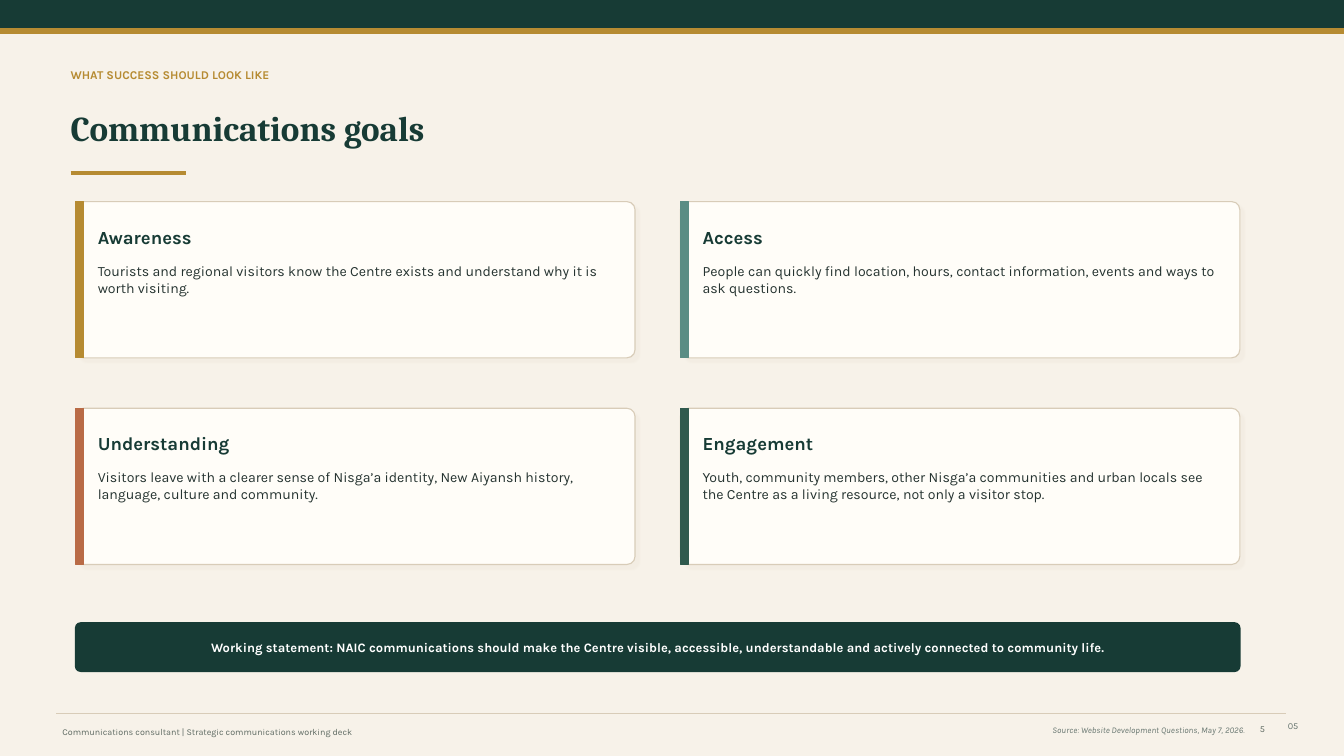
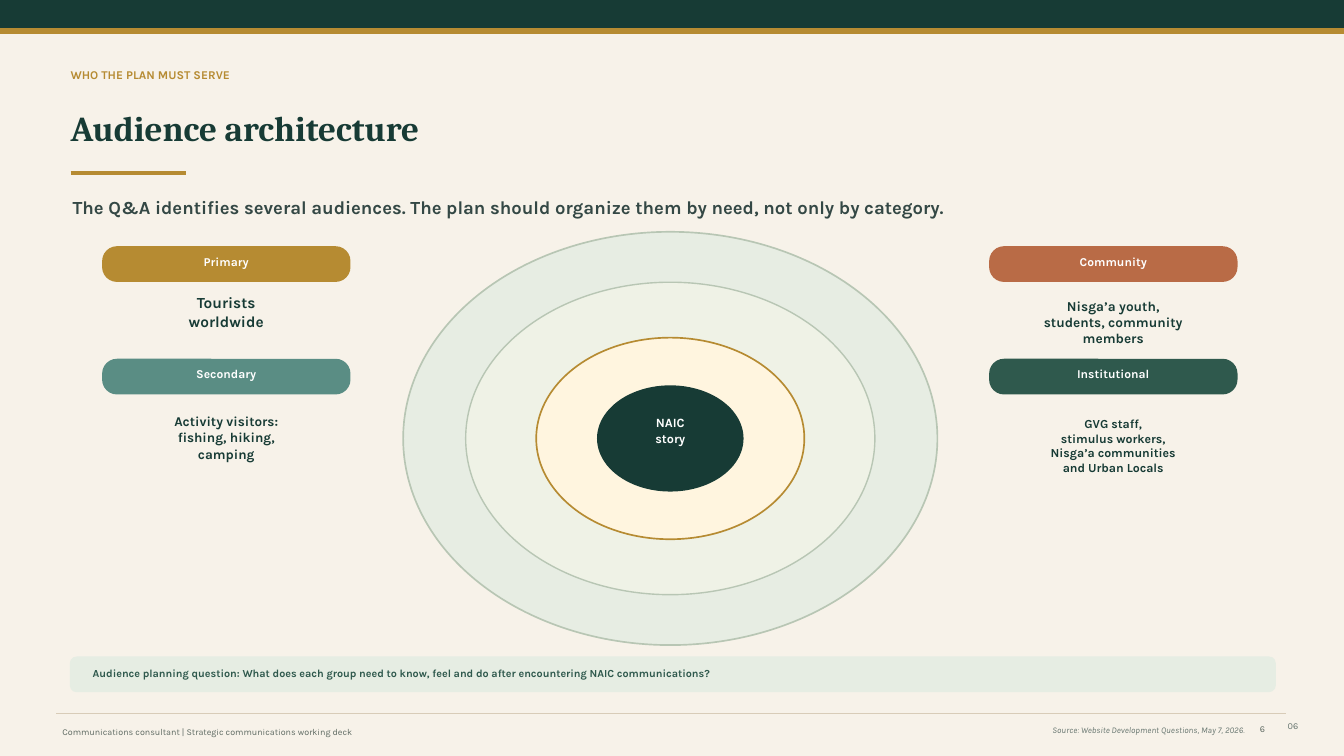
from lxml import etree
from pptx import Presentation
from pptx.dml.color import RGBColor
from pptx.enum.shapes import MSO_CONNECTOR, MSO_SHAPE as Preset
from pptx.enum.text import MSO_ANCHOR as Anchor, PP_ALIGN as Align
from pptx.oxml.ns import qn
from pptx.util import Pt

CREAM = RGBColor(0xF7, 0xF2, 0xE9)
IVORY = RGBColor(0xFF, 0xFD, 0xF8)
WHITE = RGBColor(0xFF, 0xFF, 0xFF)
PINE = RGBColor(0x17, 0x3B, 0x35)
FOREST = RGBColor(0x2F, 0x59, 0x4D)
GOLD = RGBColor(0xB6, 0x8B, 0x32)
TEAL = RGBColor(0x5A, 0x8D, 0x84)
CLAY = RGBColor(0xB9, 0x6B, 0x46)
SAND = RGBColor(0xD8, 0xCC, 0xB8)
SHADE = RGBColor(0xD7, 0xC9, 0xB5)
MIST = RGBColor(0xE6, 0xED, 0xE3)
LEAF = RGBColor(0xEF, 0xF2, 0xE6)
BUTTER = RGBColor(0xFF, 0xF5, 0xDF)
SAGE = RGBColor(0xB8, 0xC6, 0xB4)
INK = RGBColor(0x25, 0x33, 0x30)
SLATE = RGBColor(0x34, 0x48, 0x45)
MOSS = RGBColor(0x5F, 0x6B, 0x63)
GREY = RGBColor(0x66, 0x75, 0x6F)

WIDTH, HEIGHT = 960, 540
HEADING, BODY = "Cambria", "Karla"


def text_style(size, color, name=BODY, bold=False, italic=False):
    """Return a pair of font format values and text colour."""
    return {"name": name, "size": Pt(size), "bold": bold, "italic": italic}, color


EYEBROW = text_style(8.5, GOLD, bold=True)
TITLE = text_style(25, PINE, HEADING, bold=True)
LEAD = text_style(13.2, SLATE, bold=True)
CARD_TITLE = text_style(13.2, PINE, bold=True)
CARD_BODY = text_style(10.1, INK)
STATEMENT = text_style(9.2, WHITE, bold=True)
QUESTION = text_style(7.7, FOREST, bold=True)
PILL = text_style(8.6, WHITE, bold=True)
CORE = text_style(9, WHITE, bold=True)
FOOTER = text_style(6.4, MOSS)
SOURCE = text_style(6.2, GREY, italic=True)
PAGE = text_style(6.5, MOSS)
PAGE_CODE = text_style(6.5, GREY)


def points(box):
    """Convert a box of numbers to point lengths."""
    return [Pt(round(value, 2)) for value in box]


def add_text(slide, box, text, style, align=Align.LEFT, anchor=Anchor.MIDDLE):
    """Add a wrapped text box without margins, one paragraph per line."""
    frame = slide.shapes.add_textbox(*points(box)).text_frame
    settings = {"word_wrap": True, "vertical_anchor": anchor, "margin_left": 0,
                "margin_right": 0, "margin_top": 0, "margin_bottom": 0}
    for name, value in settings.items():
        setattr(frame, name, value)
    frame.text = text
    font_format, color = style
    for paragraph in frame.paragraphs:
        paragraph.alignment = align
        for run in paragraph.runs:
            for name, value in font_format.items():
                setattr(run.font, name, value)
            run.font.color.rgb = color


def add_preset(slide, preset, box, fill, line=None, weight=1, radius=None):
    """Add a filled preset shape, its line matching the fill by default."""
    shape = slide.shapes.add_shape(preset, *points(box))
    shape.shadow.inherit = False
    shape.fill.solid()
    shape.fill.fore_color.rgb = fill
    shape.line.color.rgb = line or fill
    shape.line.width = Pt(weight)
    if radius is not None:
        shape.adjustments[0] = radius / min(box[2:])
    return shape


def add_rule(slide, left, right, top, color, weight):
    """Add a horizontal line."""
    rule = slide.shapes.add_connector(
        MSO_CONNECTOR.STRAIGHT, Pt(left), Pt(top), Pt(right), Pt(top))
    rule.line.color.rgb = color
    rule.line.width = Pt(weight)
    etree.SubElement(rule._element.spPr, qn("a:effectLst"))


def set_alpha(color_element, percent):
    """Set the opacity of a colour element."""
    etree.SubElement(color_element, qn("a:alpha"), val=str(percent * 1000))


def add_soft_shadow(shape):
    """Give a shape a faint shadow to the lower right."""
    effects = shape._element.spPr.find(qn("a:effectLst"))
    shadow = etree.SubElement(
        effects, qn("a:outerShdw"), blurRad=str(Pt(1)), dist=str(Pt(4)),
        dir="2700000", algn="ctr", rotWithShape="0")
    set_alpha(etree.SubElement(shadow, qn("a:srgbClr"), val=str(SHADE)), 11)


def add_bar(slide, box, text, style, fill, radius, indent,
            align=Align.CENTER, lift=0):
    """Add a rounded bar with a label set in from its sides."""
    left, top, width, height = box
    add_preset(slide, Preset.ROUNDED_RECTANGLE, box, fill, radius=radius)
    add_text(slide, (left + indent, top - lift, width - 2 * indent, height),
             text, style, align)


def add_card(slide, box, accent, heading, body):
    """Add a card with an accent strip, a heading and body text."""
    left, top, width, height = box
    card = add_preset(slide, Preset.ROUNDED_RECTANGLE, box, IVORY, SAND, 0.8, 5.8)
    add_soft_shadow(card)
    add_preset(slide, Preset.RECTANGLE, (left, top, 5.76, height), accent)
    inner_left, inner_width = left + 15.84, width - 31.68
    add_text(slide, (inner_left, top + 12.96, inner_width, 24.48),
             heading, CARD_TITLE)
    add_text(slide, (inner_left, top + 43.2, inner_width, height - 51.84),
             body, CARD_BODY, anchor=Anchor.TOP)


def add_audience(slide, box, fill, label, members, size, depth):
    """Add an audience pill with its members listed below."""
    left, top, width, _ = box
    add_bar(slide, box, label, PILL, fill, 10.08, 8.64, lift=1.8)
    add_text(slide, (left + 4.32, top + 32, width - 8.64, depth), members,
             text_style(size, PINE, bold=True), Align.CENTER)


def add_rings(slide, box):
    """Add concentric ellipses around the labelled core."""
    left, top, width, height = box
    center_x, center_y = left + width / 2, top + height / 2
    rings = [
        (width, height, MIST, SAGE, 1.2, 90),
        (292.32, 223.2, LEAF, SAGE, 1, 100),
        (191.52, 144, BUTTER, GOLD, 1.2, 100),
        (103.68, 74.88, PINE, PINE, 1, 100),
    ]
    for across, down, fill, line, weight, opacity in rings:
        ring = add_preset(
            slide, Preset.OVAL,
            (center_x - across / 2, center_y - down / 2, across, down),
            fill, line, weight)
        if opacity < 100:
            set_alpha(ring._element.spPr.find(qn("a:solidFill"))[0], opacity)
    add_text(slide, (center_x - 41.76, center_y - 17.28, 83.52, 23.04),
             "NAIC\nstory", CORE, Align.CENTER)


def add_footer(slide, number):
    """Add the footer rule, deck name, source and page numbers."""
    add_rule(slide, 40.32, 918.72, 509.76, SAND, 0.5)
    add_text(slide, (44.64, 516.24, 540, 12.96),
             "Communications consultant | Strategic communications working deck",
             FOOTER)
    add_text(slide, (648, 516.24, 241.2, 10.8),
             "Source: Website Development Questions, May 7, 2026.",
             SOURCE, Align.RIGHT)
    add_text(slide, (902.16, 513.36, 25.2, 10.8), f"{number:02d}",
             PAGE_CODE, Align.RIGHT)
    add_text(slide, (900, 516.96, 20, 10.8), str(number), PAGE,
             anchor=Anchor.TOP)


def add_base_slide(presentation, number, eyebrow, title):
    """Add a slide with the shared bands, title block and footer."""
    slide = presentation.slides.add_slide(presentation.slide_layouts[6])
    add_preset(slide, Preset.RECTANGLE, (0, 0, WIDTH, 20.16), PINE)
    add_preset(slide, Preset.RECTANGLE, (0, 20.16, WIDTH, 3.6), GOLD)
    add_text(slide, (50.4, 44.64, 612, 17.28), eyebrow, EYEBROW)
    add_text(slide, (50.4, 66.24, 694.8, 48.96), title, TITLE)
    add_rule(slide, 50.4, 133.2, 123.84, GOLD, 3)
    add_footer(slide, number)
    return slide


def add_goals_slide(presentation):
    """Add the goals as a two by two grid of cards."""
    slide = add_base_slide(presentation, 5, "WHAT SUCCESS SHOULD LOOK LIKE",
                           "Communications goals")
    goals = [
        (GOLD, "Awareness", "Tourists and regional visitors know the Centre "
         "exists and understand why it is worth visiting."),
        (TEAL, "Access", "People can quickly find location, hours, contact "
         "information, events and ways to ask questions."),
        (CLAY, "Understanding", "Visitors leave with a clearer sense of Nisga’a "
         "identity, New Aiyansh history, language, culture and community."),
        (FOREST, "Engagement", "Youth, community members, other Nisga’a "
         "communities and urban locals see the Centre as a living resource, "
         "not only a visitor stop."),
    ]
    for index, goal in enumerate(goals):
        row, column = divmod(index, 2)
        add_card(slide, (54 + 432 * column, 144 + 147.6 * row, 399.6, 111.6), *goal)
    add_bar(slide, (54, 444.96, 831.6, 34.56),
            "Working statement: NAIC communications should make the Centre "
            "visible, accessible, understandable and actively connected to "
            "community life.", STATEMENT, PINE, 3.6, 21.6)


def add_audience_slide(presentation):
    """Add the audiences on both sides of the rings."""
    slide = add_base_slide(presentation, 6, "WHO THE PLAN MUST SERVE",
                           "Audience architecture")
    add_text(slide, (51.84, 135.36, 763.2, 25.2),
             "The Q&A identifies several audiences. The plan should organize "
             "them by need, not only by category.", LEAD)
    add_rings(slide, (288, 165.6, 381.6, 295.2))
    audiences = [
        (GOLD, "Primary", "Tourists\nworldwide", 11, 28.8),
        (TEAL, "Secondary", "Activity visitors:\nfishing, hiking,\ncamping",
         9.6, 47.52),
        (CLAY, "Community", "Nisga’a youth,\nstudents, community\nmembers",
         9.7, 43.2),
        (FOREST, "Institutional", "GVG staff,\nstimulus workers,\n"
         "Nisga’a communities\nand Urban Locals", 8.8, 59.04),
    ]
    for index, audience in enumerate(audiences):
        side, row = divmod(index, 2)
        add_audience(slide, (73.44 + 633.6 * side, 176.4 + 80.4 * row, 176.4, 24.48),
                     *audience)
    add_bar(slide, (50.4, 469.44, 860.4, 24.48),
            "Audience planning question: What does each group need to know, "
            "feel and do after encountering NAIC communications?",
            QUESTION, MIST, 4.32, 15.84, Align.LEFT, lift=0.5)


def main():
    """Build and save the presentation."""
    presentation = Presentation()
    presentation.slide_width, presentation.slide_height = Pt(WIDTH), Pt(HEIGHT)
    background = presentation.slide_master.background.fill
    background.solid()
    background.fore_color.rgb = CREAM
    add_goals_slide(presentation)
    add_audience_slide(presentation)
    presentation.save("out.pptx")


if __name__ == "__main__":
    main()
